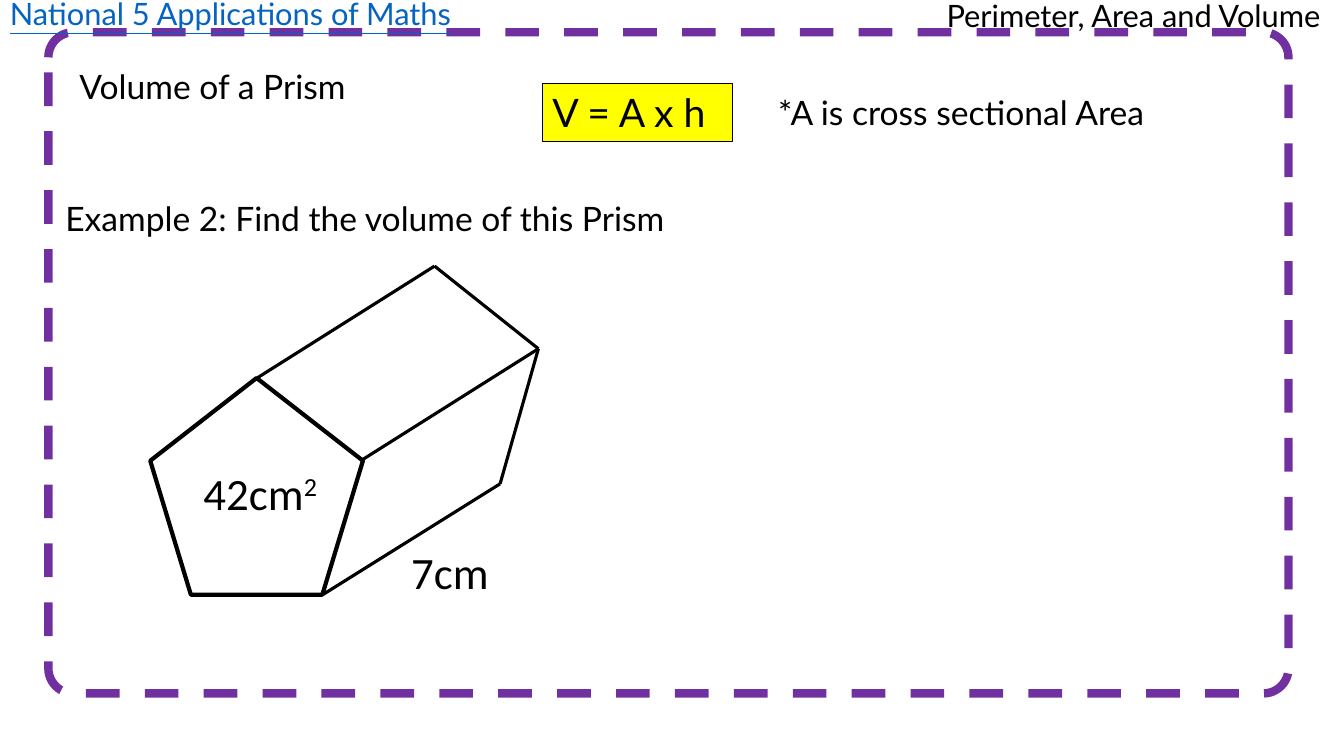
import pptx
import pptx.dml.color
import pptx.enum.dml
import pptx.enum.shapes
import pptx.enum.text
import pptx.oxml.ns
import pptx.util
import lxml.etree

Inches = pptx.util.Inches
Pt = pptx.util.Pt
RGBColor = pptx.dml.color.RGBColor
MSO_SHAPE = pptx.enum.shapes.MSO_SHAPE

BLACK = RGBColor(0x00, 0x00, 0x00)
PURPLE = RGBColor(0x70, 0x30, 0xA0)
LINK_BLUE = RGBColor(0x05, 0x63, 0xC1)
YELLOW = RGBColor(0xFF, 0xFF, 0x00)

APEX, FRONT_RIGHT, FRONT_BASE = (2.55, 3.75), (3.58, 4.57), (3.2, 5.9)
BACK_APEX, BACK_RIGHT, BACK_BASE = (4.31, 2.64), (5.34, 3.46), (4.96, 4.8)
PRISM_EDGES = [
    (APEX, BACK_APEX),
    (FRONT_RIGHT, BACK_RIGHT),
    (FRONT_BASE, BACK_BASE),
    (BACK_RIGHT, BACK_APEX),
    (BACK_BASE, BACK_RIGHT),
]


def add_span(para, text, size, font="Lato", color=BLACK, underline=None, superscript=False):
    span = para.add_run()
    span.text = text
    span.font.size = Pt(size)
    span.font.name = font
    span.font.color.rgb = color
    span.font.underline = underline
    if superscript:
        span.font._element.set("baseline", "30000")


def add_label(page, bounds, text, size, wrap=True, **style):
    box = page.shapes.add_textbox(*map(Inches, bounds))
    frame = box.text_frame
    frame.word_wrap = wrap
    frame.auto_size = pptx.enum.text.MSO_AUTO_SIZE.SHAPE_TO_FIT_TEXT
    add_span(frame.paragraphs[0], text, size, **style)
    return box


def add_outline(page, kind, bounds, color, width):
    shape = page.shapes.add_shape(kind, *map(Inches, bounds))
    shape.shadow.inherit = False
    shape.fill.background()
    shape.line.color.rgb = color
    shape.line.width = Pt(width)
    return shape


def add_edge(page, start, end):
    edge = page.shapes.add_connector(
        pptx.enum.shapes.MSO_CONNECTOR.STRAIGHT, *map(Inches, start + end))
    edge.line.color.rgb = BLACK
    edge.line.width = Pt(2.25)
    lxml.etree.SubElement(edge._element.spPr, pptx.oxml.ns.qn("a:effectLst"))


def add_frame(page):
    border = add_outline(page, MSO_SHAPE.ROUNDED_RECTANGLE, (0.48, 0.32, 12.3, 6.56), PURPLE, 6)
    border.adjustments[0] = 0.038
    border.line.dash_style = pptx.enum.dml.MSO_LINE.DASH


def add_formula(page):
    formula = add_label(page, (5.38, 0.83, 1.89, 0.57), "V = A x h", 28)
    formula.fill.solid()
    formula.fill.fore_color.rgb = YELLOW
    formula.line.color.rgb = BLACK
    formula.line.width = Pt(0.75)


def add_prism(page):
    add_outline(page, MSO_SHAPE.REGULAR_PENTAGON, (1.49, 3.75, 2.11, 2.15), BLACK, 3)
    for start, end in PRISM_EDGES:
        add_edge(page, start, end)
    area = add_label(page, (1.92, 4.57, 1.36, 0.64), "42cm", 32, wrap=False, font="Calibri")
    add_span(area.text_frame.paragraphs[0], "2", 32, font="Calibri", superscript=True)
    add_label(page, (3.98, 5.36, 0.98, 0.64), "7cm", 32, wrap=False, font="Calibri")


def main():
    deck = pptx.Presentation()
    deck.slide_width = Inches(13.33)
    deck.slide_height = Inches(7.5)
    page = deck.slides.add_slide(deck.slide_layouts[6])

    add_frame(page)
    add_label(page, (9.29, -0.08, 4.04, 0.47), "Perimeter, Area and Volume", 22, wrap=False)
    add_label(page, (0, -0.1, 4.63, 0.47), "National 5 Applications of Maths", 22,
              wrap=False, color=LINK_BLUE, underline=True)
    add_label(page, (0.69, 0.6, 5.83, 0.5), "Volume of a Prism", 24)
    add_formula(page)
    add_label(page, (0.55, 1.91, 8.64, 0.5), "Example 2: Find the volume of this Prism", 24)
    add_label(page, (7.62, 0.86, 4.06, 0.5), "*A is cross sectional Area", 24)
    add_prism(page)

    deck.save("out.pptx")


if __name__ == "__main__":
    main()
